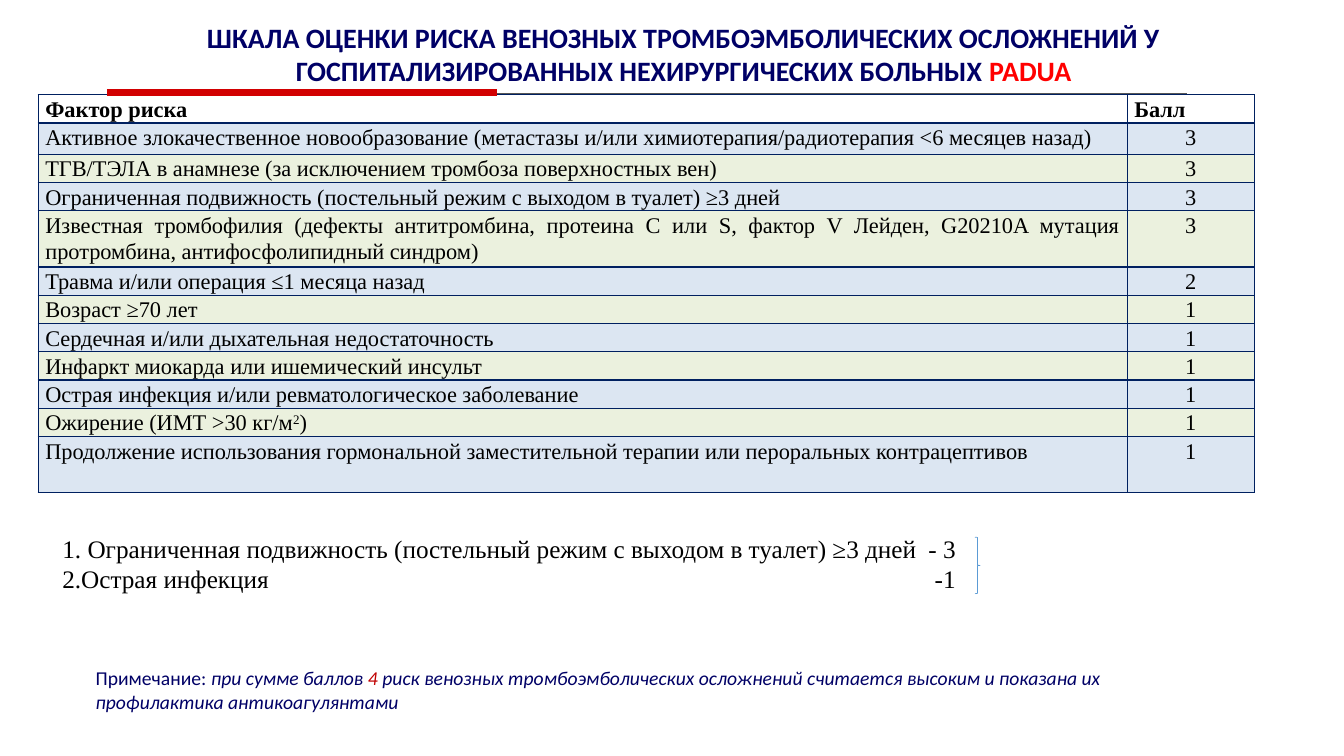
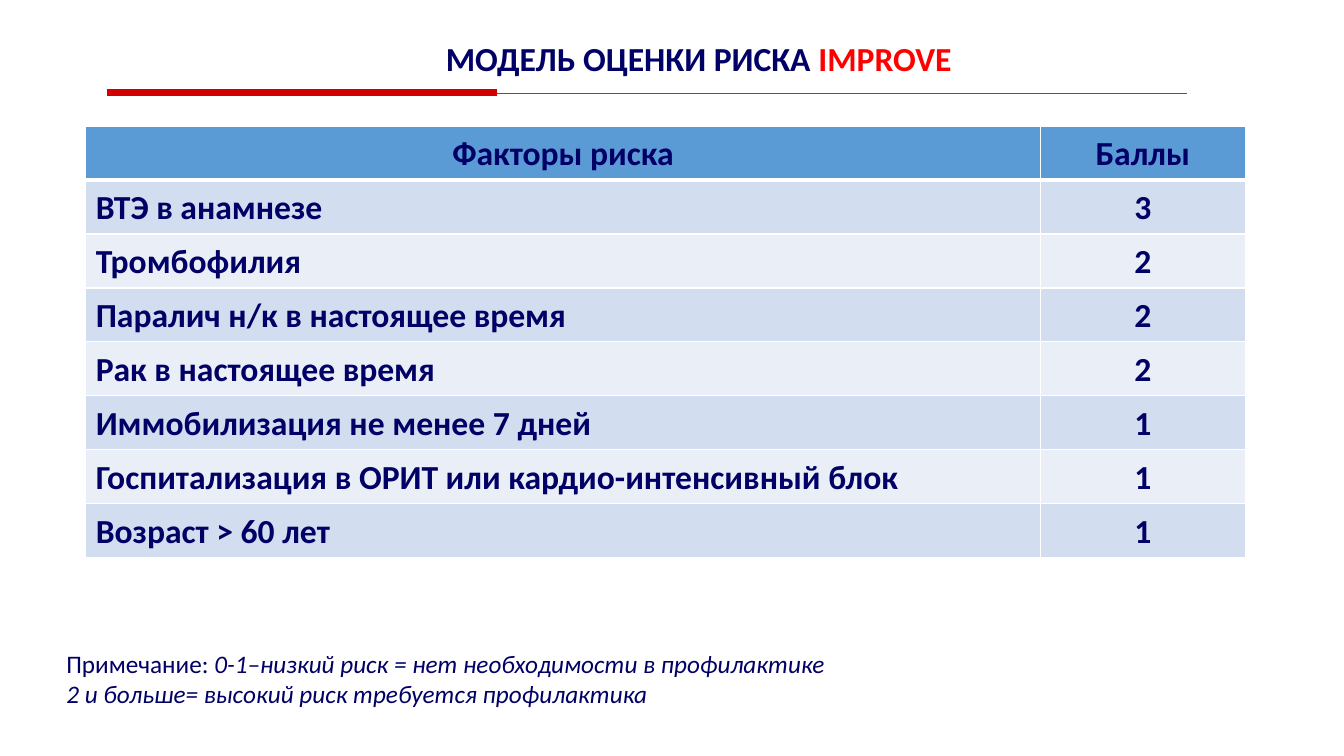
from lxml.etree import SubElement
from pptx import Presentation
from pptx.dml.color import RGBColor
from pptx.enum.shapes import MSO_CONNECTOR, MSO_SHAPE
from pptx.enum.text import MSO_ANCHOR, MSO_AUTO_SIZE, PP_ALIGN
from pptx.oxml.ns import qn
from pptx.util import Emu, Pt

PX = 9144  # EMU in one px, 100 px to the inch
COLORS = {
    "navy": "000066", "red": "FF0000", "dark_red": "C00000", "black": "000000",
    "rule": "565656", "rule_red": "D20001", "white": "FFFFFF", "grid": "002060",
    "blue": "5B9BD5", "pale_blue": "DCE6F2", "pale_green": "EBF1DE",
    "band_dark": "D2DEEF", "band_light": "EAEFF7",
}
SERIF, SANS = "Times New Roman", "Calibri"
TITLE_STYLE = {"name": SANS, "color": "navy", "bold": True}
NOTE_STYLE = {"name": SANS, "color": "navy"}

PADUA_ROWS = [
    ("Фактор риска", "Балл"),
    ("Активное злокачественное новообразование (метастазы и/или "
     "химиотерапия/радиотерапия <6 месяцев назад)", "3"),
    ("ТГВ/ТЭЛА в анамнезе (за исключением тромбоза поверхностных вен)", "3"),
    ("Ограниченная подвижность (постельный режим с выходом в туалет) ≥3 дней", "3"),
    ("Известная тромбофилия (дефекты антитромбина, протеина С или S, фактор V Лейден, "
     "G20210A мутация протромбина, антифосфолипидный синдром)", "3"),
    ("Травма и/или операция ≤1 месяца назад", "2"),
    ("Возраст ≥70 лет", "1"),
    ("Сердечная и/или дыхательная недостаточность", "1"),
    ("Инфаркт миокарда или ишемический инсульт", "1"),
    ("Острая инфекция и/или ревматологическое заболевание", "1"),
    (["Ожирение (ИМТ >30 кг/м", ("2", {"superscript": True}), ")"], "1"),
    ("Продолжение использования гормональной заместительной терапии или "
     "пероральных контрацептивов", "1"),
]
IMPROVE_ROWS = [
    ("Факторы риска", "Баллы"),
    ("ВТЭ в анамнезе", "3"),
    ("Тромбофилия", "2"),
    ("Паралич н/к в настоящее время", "2"),
    ("Рак в настоящее время", "2"),
    ("Иммобилизация не менее 7 дней", "1"),
    ("Госпитализация в ОРИТ или кардио-интенсивный блок", "1"),
    ("Возраст > 60 лет", "1"),
]


def px(*lengths):
    return [Emu(n * PX) for n in lengths]


def rgb(color):
    return RGBColor.from_string(COLORS[color])


def set_font(font, size=None, name=None, color=None, bold=None, italic=None):
    if size:
        font.size = Pt(size)
    if name:
        font.name = name
    if color:
        font.color.rgb = rgb(color)
    if bold is not None:
        font.bold = bold
    if italic is not None:
        font.italic = italic


def write(p, runs, align=PP_ALIGN.LEFT, **style):
    """Fill a paragraph; a run is a string or a pair of string and overrides."""
    p.alignment = align
    set_font(p.font, **style)
    for run in [runs] if isinstance(runs, str) else runs:
        text, changes = (run, {}) if isinstance(run, str) else run
        r = p.add_run()
        r.text = text
        if changes.get("superscript"):
            r._r.get_or_add_rPr().set("baseline", "30000")
        else:
            set_font(r.font, **changes)


def add_title(s, box, size, text, scale_name):
    title = s.shapes.title
    title.left, title.top, title.width, title.height = px(*box)
    tf = title.text_frame
    tf.word_wrap = True
    tf.auto_size = MSO_AUTO_SIZE.NONE
    tf.vertical_anchor = MSO_ANCHOR.TOP
    write(tf.paragraphs[0], [text, (scale_name, {"color": "red"})],
          PP_ALIGN.CENTER, size=size, **TITLE_STYLE)


def add_text(s, box, paragraphs, **style):
    tf = s.shapes.add_textbox(*px(*box)).text_frame
    tf.word_wrap = True
    for i, runs in enumerate(paragraphs):
        p = tf.add_paragraph() if i else tf.paragraphs[0]
        write(p, runs, **style)
    return tf


def add_title_rule(s):
    for x1, x2, y, color, width in ((107, 1177, 93, "rule", 0.75),
                                    (106, 493, 92, "rule_red", 5.2)):
        line = s.shapes.add_connector(MSO_CONNECTOR.STRAIGHT, *px(x1, y, x2, y))
        line.line.color.rgb = rgb(color)
        line.line.width = Pt(width)
        SubElement(line._element.spPr, qn("a:effectLst"))


def set_borders(cell, color, **widths):
    tcPr = cell._tc.get_or_add_tcPr()
    for side in "LRTB":
        width = Pt(widths.get(side, 1))
        ln = SubElement(tcPr, qn(f"a:ln{side}"), w=str(width))
        SubElement(SubElement(ln, qn("a:solidFill")), qn("a:srgbClr"), val=COLORS[color])


def add_score_table(s, left, top, cols, heights, rows, bands, grid, header_fill=None,
                    header_aligns=(PP_ALIGN.CENTER, PP_ALIGN.CENTER),
                    header_rule=1, margins=(10, 5, 10, 5), body_bold=False, **style):
    """Table of factors and points with a header row and two alternating bands."""
    box = px(left, top, sum(cols), sum(heights))
    table = s.shapes.add_table(len(rows), len(cols), *box).table
    table.first_row = table.horz_banding = False
    for col, width in zip(table.columns, px(*cols)):
        col.width = width
    for row, height in zip(table.rows, px(*heights)):
        row.height = height
    for i, row in enumerate(rows):
        fill = bands[(i - 1) % 2] if i else header_fill
        aligns = (PP_ALIGN.JUSTIFY, PP_ALIGN.CENTER) if i else header_aligns
        rule = {0: {"B": header_rule}, 1: {"T": header_rule}}.get(i, {})
        for j, runs in enumerate(row):
            cell = table.cell(i, j)
            (cell.margin_left, cell.margin_top,
             cell.margin_right, cell.margin_bottom) = px(*margins)
            set_borders(cell, grid, **rule)
            if fill:
                cell.fill.solid()
                cell.fill.fore_color.rgb = rgb(fill)
            else:
                cell.fill.background()
            p = cell.text_frame.paragraphs[0]
            p.line_spacing = 1.07
            write(p, runs, aligns[j], bold=i == 0 or body_bold, **style)


def add_patient_score(s, left, top):
    """Two scored factors, points at a right tab, closed by a brace."""
    tf = add_text(s, (left, top, 1028, 71), [
        "1. Ограниченная подвижность (постельный режим с выходом в туалет) ≥3 дней\t- 3",
        "2.Острая инфекция\t-1",
    ], size=18, name=SERIF, color="black")
    for p in tf.paragraphs:
        pPr = p._p.get_or_add_pPr()
        tabs = pPr.makeelement(qn("a:tabLst"), {})
        SubElement(tabs, qn("a:tab"), pos=str(px(886)[0]), algn="r")
        pPr.find(qn("a:defRPr")).addprevious(tabs)
    brace = s.shapes.add_shape(MSO_SHAPE.RIGHT_BRACE, *px(left + 915, top + 9, 5, 56))
    brace.shadow.inherit = False
    brace.fill.background()
    brace.line.color.rgb = rgb("blue")
    brace.line.width = Pt(0.5)


def padua_slide(s):
    add_title(s, (52, 15, 1252, 77), 20,
              "ШКАЛА ОЦЕНКИ РИСКА ВЕНОЗНЫХ ТРОМБОЭМБОЛИЧЕСКИХ ОСЛОЖНЕНИЙ У "
              "ГОСПИТАЛИЗИРОВАННЫХ НЕХИРУРГИЧЕСКИХ БОЛЬНЫХ ", "PADUA")
    heights = [28] * len(PADUA_ROWS)
    heights[1] = 31
    heights[4] = heights[-1] = 56
    add_score_table(s, 38, 94, (1080, 126), heights, PADUA_ROWS,
                    ("pale_blue", "pale_green"), "grid",
                    header_aligns=(PP_ALIGN.JUSTIFY, PP_ALIGN.JUSTIFY),
                    margins=(7, 1, 7, 0), size=16, name=SERIF, color="black")
    add_title_rule(s)
    add_patient_score(s, 52, 524)
    add_text(s, (85, 656, 1070, 57), [[
        "Примечание: ",
        ("при сумме баллов ", {"italic": True}),
        ("4 ", {"italic": True, "color": "dark_red"}),
        ("риск венозных тромбоэмболических осложнений считается высоким и показана их "
         "профилактика антикоагулянтами", {"italic": True}),
    ]], size=14, **NOTE_STYLE)


def improve_slide(s):
    add_title(s, (393, 33, 600, 50), 24, "МОДЕЛЬ ОЦЕНКИ РИСКА ", "IMPROVE")
    add_score_table(s, 85, 125, (947, 203), [53] * len(IMPROVE_ROWS), IMPROVE_ROWS,
                    ("band_dark", "band_light"), "white", header_fill="blue",
                    header_rule=3, body_bold=True, size=24, name=SANS, color="navy")
    add_title_rule(s)
    add_text(s, (56, 638, 1110, 71), [
        ["Примечание: ",
         ("0-1–низкий риск = нет необходимости в профилактике", {"italic": True})],
        [("2 и больше= высокий риск требуется профилактика", {"italic": True})],
    ], size=18, **NOTE_STYLE)


def main():
    prs = Presentation()
    prs.slide_width, prs.slide_height = px(1333, 750)
    title_only = prs.slide_layouts[5]
    for build in (padua_slide, improve_slide):
        build(prs.slides.add_slide(title_only))
    prs.save("out.pptx")


if __name__ == "__main__":
    main()
